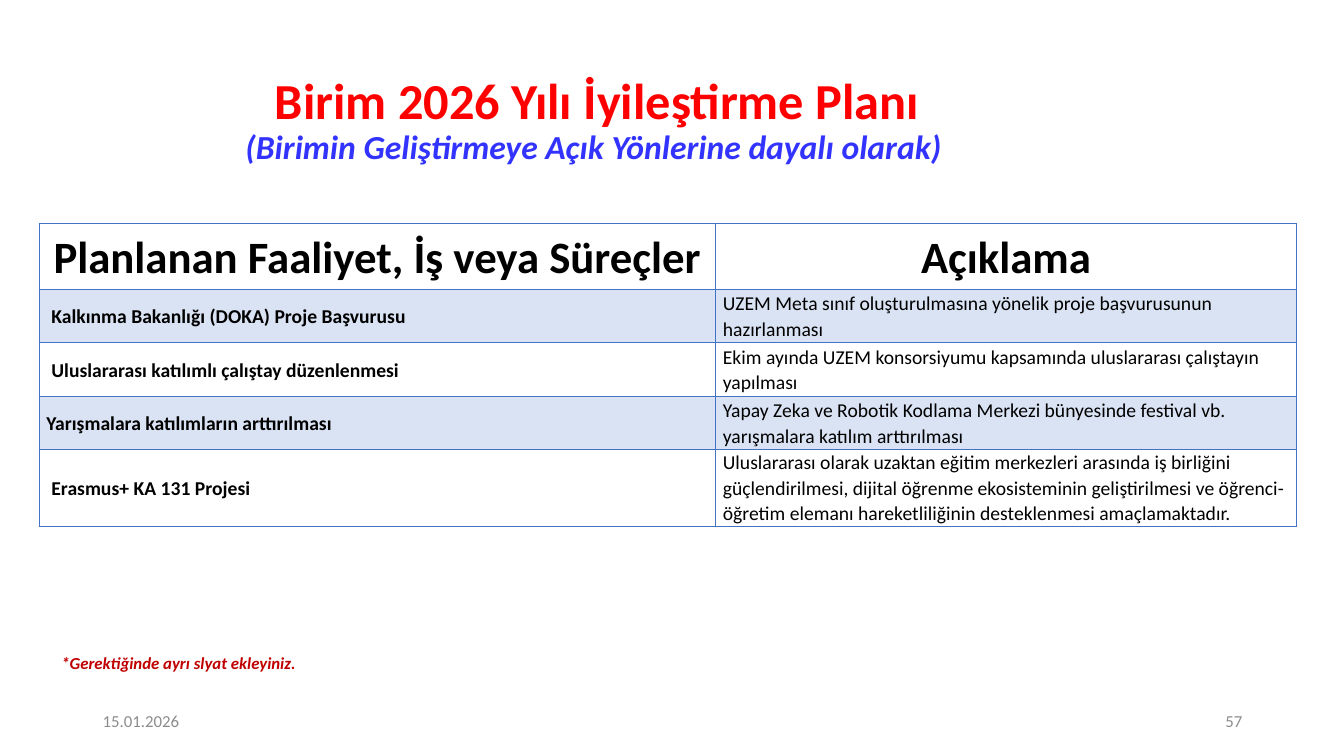
from dataclasses import dataclass

from lxml.etree import SubElement
from pptx import Presentation
from pptx.dml.color import RGBColor
from pptx.enum.text import MSO_ANCHOR, MSO_AUTO_SIZE, PP_ALIGN
from pptx.oxml.ns import qn
from pptx.util import Inches, Pt


@dataclass(frozen=True)
class Theme:
    font: str = "Calibri"
    title: str = "FF0000"
    subtitle: str = "3333FF"
    text: str = "000000"
    muted: str = "8C8C8C"
    note: str = "C00000"
    border: str = "4472C4"
    band: str = "DAE3F3"
    title_size: int = 36
    header_size: int = 32
    subtitle_size: int = 24
    body_size: int = 14
    small_size: int = 12


THEME = Theme()
COLUMN_WIDTHS = (6.71, 5.76)
ROW_HEIGHTS = (0.65, 0.53, 0.53, 0.53, 0.76)
CELL_MARGIN, INDENTED_MARGIN = 0.07, 0.12
HEADERS = ("Planlanan Faaliyet, İş veya Süreçler", "Açıklama")
# Activity, explanation, whether the activity is indented
ACTIVITIES = (
    ("Kalkınma Bakanlığı (DOKA) Proje Başvurusu",
     "UZEM Meta sınıf oluşturulmasına yönelik proje başvurusunun hazırlanması", True),
    ("Uluslararası katılımlı çalıştay düzenlenmesi",
     "Ekim ayında UZEM konsorsiyumu kapsamında uluslararası çalıştayın yapılması", True),
    ("Yarışmalara katılımların arttırılması",
     "Yapay Zeka ve Robotik Kodlama Merkezi bünyesinde festival vb. "
     "yarışmalara katılım arttırılması", False),
    ("Erasmus+ KA 131 Projesi",
     "Uluslararası olarak uzaktan eğitim merkezleri arasında iş birliğini "
     "güçlendirilmesi, dijital öğrenme ekosisteminin geliştirilmesi ve "
     "öğrenci-öğretim elemanı hareketliliğinin desteklenmesi amaçlamaktadır.", True),
)


def add_text(p, text, size=THEME.body_size, color=THEME.text, bold=False,
             italic=False, align=PP_ALIGN.LEFT, spacing=None):
    """Add one formatted run to paragraph p."""
    p.alignment = align
    if spacing:
        p.line_spacing = spacing
    r = p.add_run()
    r.text = text
    r.font.name = THEME.font
    r.font.size = Pt(size)
    r.font.bold = bold
    r.font.italic = italic
    r.font.color.rgb = RGBColor.from_string(color)


def add_title(s):
    title = s.shapes.title
    title.left, title.top = Inches(0.3), Inches(0.78)
    title.width, title.height = Inches(11.25), Inches(0.84)
    tf = title.text_frame
    tf.auto_size = MSO_AUTO_SIZE.NONE
    tf.vertical_anchor = MSO_ANCHOR.MIDDLE
    p = tf.paragraphs[0]
    style = dict(bold=True, align=PP_ALIGN.CENTER, spacing=0.9)
    add_text(p, "Birim 2026 Yılı İyileştirme Planı",
             size=THEME.title_size, color=THEME.title, **style)
    p.add_line_break()
    add_text(p, "(Birimin Geliştirmeye Açık Yönlerine dayalı olarak) ",
             size=THEME.subtitle_size, color=THEME.subtitle, italic=True, **style)


def add_label(s, text, left, top, width, height, anchor=MSO_ANCHOR.MIDDLE, **style):
    box = s.shapes.add_textbox(Inches(left), Inches(top), Inches(width), Inches(height))
    tf = box.text_frame
    tf.word_wrap = True
    tf.vertical_anchor = anchor
    add_text(tf.paragraphs[0], text, size=THEME.small_size, **style)


def set_borders(cell):
    tcPr = cell._tc.get_or_add_tcPr()
    for side in "LRTB":
        ln = SubElement(tcPr, qn(f"a:ln{side}"), w=str(Pt(1)))
        fill = SubElement(ln, qn("a:solidFill"))
        SubElement(fill, qn("a:srgbClr"), val=THEME.border)


def fill_cell(cell, text, banded=False, margin=CELL_MARGIN, **style):
    cell.margin_left, cell.margin_right = Inches(margin), Inches(CELL_MARGIN)
    cell.margin_top = cell.margin_bottom = 0
    cell.vertical_anchor = MSO_ANCHOR.MIDDLE
    set_borders(cell)
    if banded:
        cell.fill.solid()
        cell.fill.fore_color.rgb = RGBColor.from_string(THEME.band)
    else:
        cell.fill.background()
    add_text(cell.text_frame.paragraphs[0], text, spacing=1.07, **style)


def add_plan_table(s):
    table = s.shapes.add_table(
        len(ROW_HEIGHTS), len(COLUMN_WIDTHS), Inches(0.39), Inches(2.22),
        Inches(sum(COLUMN_WIDTHS)), Inches(sum(ROW_HEIGHTS))).table
    table.first_row = table.horz_banding = False
    for column, width in zip(table.columns, COLUMN_WIDTHS):
        column.width = Inches(width)
    for row, height in zip(table.rows, ROW_HEIGHTS):
        row.height = Inches(height)
    for col, header in enumerate(HEADERS):
        fill_cell(table.cell(0, col), header, bold=True,
                  size=THEME.header_size, align=PP_ALIGN.CENTER)
    for row, (activity, explanation, indented) in enumerate(ACTIVITIES, start=1):
        banded = row % 2 == 1
        fill_cell(table.cell(row, 0), activity, banded=banded, bold=True,
                  margin=INDENTED_MARGIN if indented else CELL_MARGIN)
        fill_cell(table.cell(row, 1), explanation, banded=banded)


def main():
    prs = Presentation()
    prs.slide_width, prs.slide_height = Inches(13.33), Inches(7.5)
    s = prs.slides.add_slide(prs.slide_layouts[5])
    add_title(s)
    add_label(s, "15.01.2026", 0.92, 6.95, 3, 0.4, color=THEME.muted)
    add_label(s, "57", 9.42, 6.95, 3, 0.4, color=THEME.muted, align=PP_ALIGN.RIGHT)
    add_plan_table(s)
    add_label(s, "*Gerektiğinde ayrı slyat ekleyiniz.", 0.51, 6.43, 5, 0.3,
              anchor=MSO_ANCHOR.TOP, color=THEME.note, bold=True, italic=True)
    prs.save("out.pptx")


if __name__ == "__main__":
    main()
